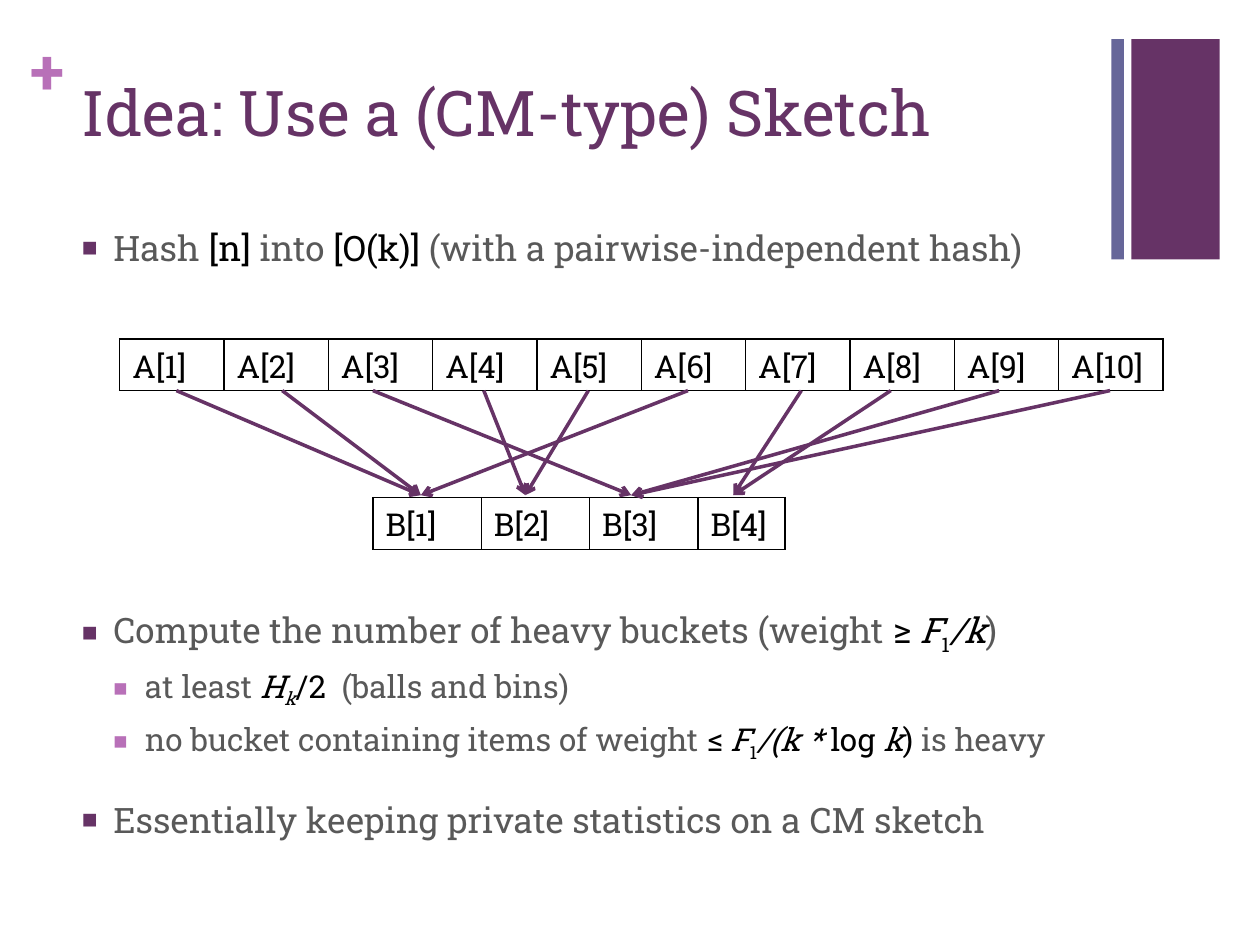
from dataclasses import dataclass

from lxml.etree import SubElement
from pptx import Presentation
from pptx.dml.color import RGBColor
from pptx.enum.shapes import MSO_CONNECTOR as Connector, MSO_SHAPE as Shape
from pptx.enum.text import MSO_ANCHOR as Anchor, MSO_AUTO_SIZE as AutoSize, PP_ALIGN as Align
from pptx.oxml.ns import qn
from pptx.util import Inches, Pt

FONT = "Roboto Slab"
PURPLE = RGBColor(0x66, 0x33, 0x66)
ORCHID = RGBColor(0xB8, 0x70, 0xB8)
SLATE = RGBColor(0x66, 0x66, 0x99)
GREY = RGBColor(0x59, 0x59, 0x59)
BLACK = RGBColor(0, 0, 0)


@dataclass
class Span:
    text: str
    color: RGBColor = GREY
    italic: bool = False
    subscript: bool = False


@dataclass
class Bullet:
    spans: list[Span]
    level: int = 0
    before: float = 20


@dataclass
class Row:
    name: str
    left: float
    top: float
    widths: list[float]


@dataclass
class Hash:
    start: float
    bucket: int


def math(text: str, italic: bool = False, subscript: bool = False) -> Span:
    return Span(text, BLACK, italic, subscript)


def write(para, text: str, *, size: float, color: RGBColor, bold: bool = False,
          italic: bool = False, subscript: bool = False) -> None:
    run = para.add_run()
    run.text = text
    font = run.font
    font.name, font.size, font.bold, font.italic = FONT, Pt(size), bold, italic
    font.color.rgb = color
    if subscript:
        run._r.get_or_add_rPr().set("baseline", "-25000")


def place(box, left: float, top: float, width: float, height: float) -> None:
    box.left, box.top = Inches(left), Inches(top)
    box.width, box.height = Inches(width), Inches(height)


def add_bar(page, left: float, width: float, color: RGBColor) -> None:
    bar = page.shapes.add_shape(Shape.RECTANGLE, Inches(left), Inches(0.31),
                                Inches(width), Inches(1.75))
    bar.shadow.inherit = False
    bar.fill.solid()
    bar.fill.fore_color.rgb = color
    bar.line.fill.background()


def add_bullet(para, bullet: Bullet) -> None:
    para.level = bullet.level
    para.space_before = Pt(bullet.before)
    properties = para._p.get_or_add_pPr()
    properties.set("marL", str(Inches(0.25 * (bullet.level + 1))))
    properties.set("indent", str(Inches(-0.25)))
    color = SubElement(properties, qn("a:buClr"))
    SubElement(color, qn("a:srgbClr"), val=str((PURPLE, ORCHID)[bullet.level]))
    SubElement(properties, qn("a:buSzPct"), val="75000")
    SubElement(properties, qn("a:buChar"), char="■")
    for span in bullet.spans:
        write(para, span.text, size=20 - 2 * bullet.level, color=span.color,
              italic=span.italic, subscript=span.subscript)


def add_row(page, row: Row) -> None:
    frame = page.shapes.add_table(1, len(row.widths), Inches(row.left), Inches(row.top),
                                  Inches(sum(row.widths)), Inches(0.41))
    table = frame.table
    table.first_row = table.horz_banding = False
    for index, width in enumerate(row.widths):
        table.columns[index].width = Inches(width)
        cell = table.cell(0, index)
        cell.vertical_anchor = Anchor.MIDDLE
        write(cell.text_frame.paragraphs[0], f"{row.name}[{index + 1}]", size=18, color=BLACK)
        properties = cell._tc.get_or_add_tcPr()
        for side in ("lnL", "lnR", "lnT", "lnB"):
            border = SubElement(properties, qn(f"a:{side}"), w=str(Pt(1)))
            fill = SubElement(border, qn("a:solidFill"))
            SubElement(fill, qn("a:srgbClr"), val=str(BLACK))
        cell.fill.background()


def add_arrow(page, start: float, end: float) -> None:
    arrow = page.shapes.add_connector(Connector.STRAIGHT, Inches(start), Inches(3.1),
                                      Inches(end), Inches(3.93))
    arrow.line.color.rgb = PURPLE
    arrow.line.width = Pt(2)
    SubElement(arrow.line._get_or_add_ln(), qn("a:tailEnd"), type="arrow")
    SubElement(arrow._element.spPr, qn("a:effectLst"))


BULLETS = [
    Bullet([Span("Hash "), math("[n]"), Span(" into "), math("[O(k)]"),
            Span(" (with a pairwise-independent hash)")]),
    # The wide gap leaves room for the hashing diagram
    Bullet([Span("Compute the number of heavy buckets (weight "), math("≥ "),
            math("F", italic=True), math("1", subscript=True),
            math("/k", italic=True), Span(")")], before=194),
    Bullet([Span("at least "), math("H", italic=True),
            math("k", italic=True, subscript=True), math("/2 "),
            Span(" (balls and bins)")], level=1, before=6),
    Bullet([Span("no bucket containing items of weight "), math("≤ "),
            math("F", italic=True), math("1", subscript=True),
            math("/(k * ", italic=True), math("log "), math("k", italic=True),
            math(") "), Span("is heavy")], level=1, before=6),
    Bullet([Span("Essentially keeping private statistics on a CM sketch")]),
]
ROWS = [
    Row("A", 0.95, 2.69, [0.828] * 10),
    Row("B", 2.96, 3.95, [0.86] * 3 + [0.69]),
]
BUCKET_CENTERS = {1: 3.34, 2: 4.17, 3: 5.01, 4: 5.82}
HASHES = [
    Hash(1.4, 1), Hash(2.24, 1), Hash(2.96, 3), Hash(3.84, 2), Hash(4.67, 2),
    Hash(5.46, 1), Hash(6.36, 4), Hash(7.07, 4), Hash(7.93, 3), Hash(8.81, 3),
]


def main() -> None:
    deck = Presentation()
    deck.slide_width, deck.slide_height = Inches(10), Inches(7.5)
    page = deck.slides.add_slide(deck.slide_layouts[1])

    # Corner decoration
    add_bar(page, 8.98, 0.7, PURPLE)
    add_bar(page, 8.82, 0.1, SLATE)
    plus = page.shapes.add_textbox(Inches(0.24), Inches(0.25), Inches(0.29), Inches(0.61))
    frame = plus.text_frame
    frame.margin_left = frame.margin_right = frame.margin_top = frame.margin_bottom = 0
    frame.word_wrap = True
    write(frame.paragraphs[0], "+", size=36, color=ORCHID, bold=True)

    # Title and bullets
    title, body = page.shapes.title, page.placeholders[1]
    place(title, 0.55, 0.53, 8.26, 1.22)
    place(body, 0.55, 1.75, 8.26, 4.95)
    for box in (title, body):
        box.text_frame.auto_size = AutoSize.NONE
        box.text_frame.vertical_anchor = Anchor.TOP
    heading = title.text_frame.paragraphs[0]
    heading.alignment = Align.LEFT
    write(heading, "Idea: Use a (CM-type) Sketch", size=36, color=PURPLE)
    for index, bullet in enumerate(BULLETS):
        text = body.text_frame
        add_bullet(text.add_paragraph() if index else text.paragraphs[0], bullet)

    # Hashing diagram
    for row in ROWS:
        add_row(page, row)
    for item in HASHES:
        add_arrow(page, item.start, BUCKET_CENTERS[item.bucket])

    deck.save("out.pptx")


if __name__ == "__main__":
    main()
